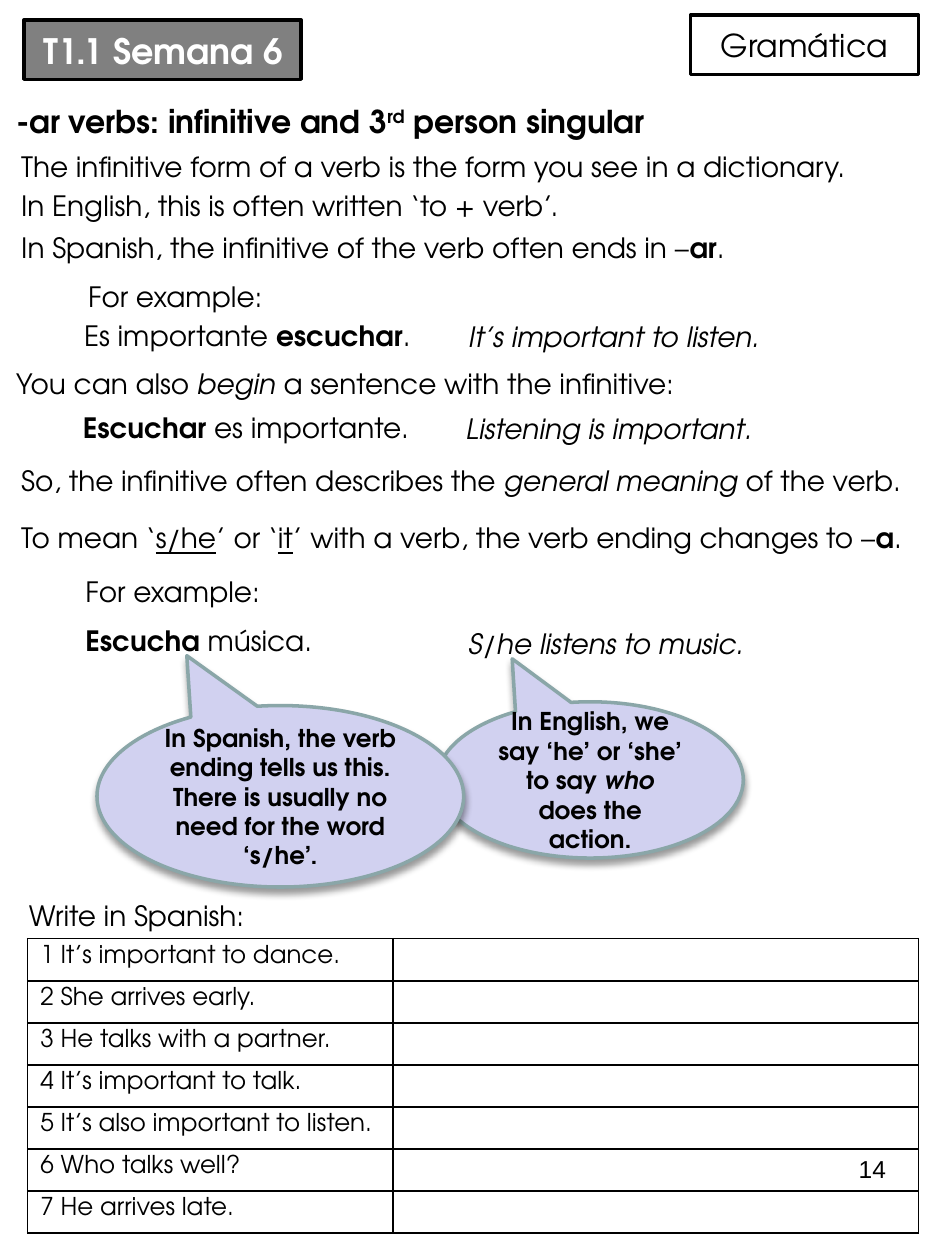
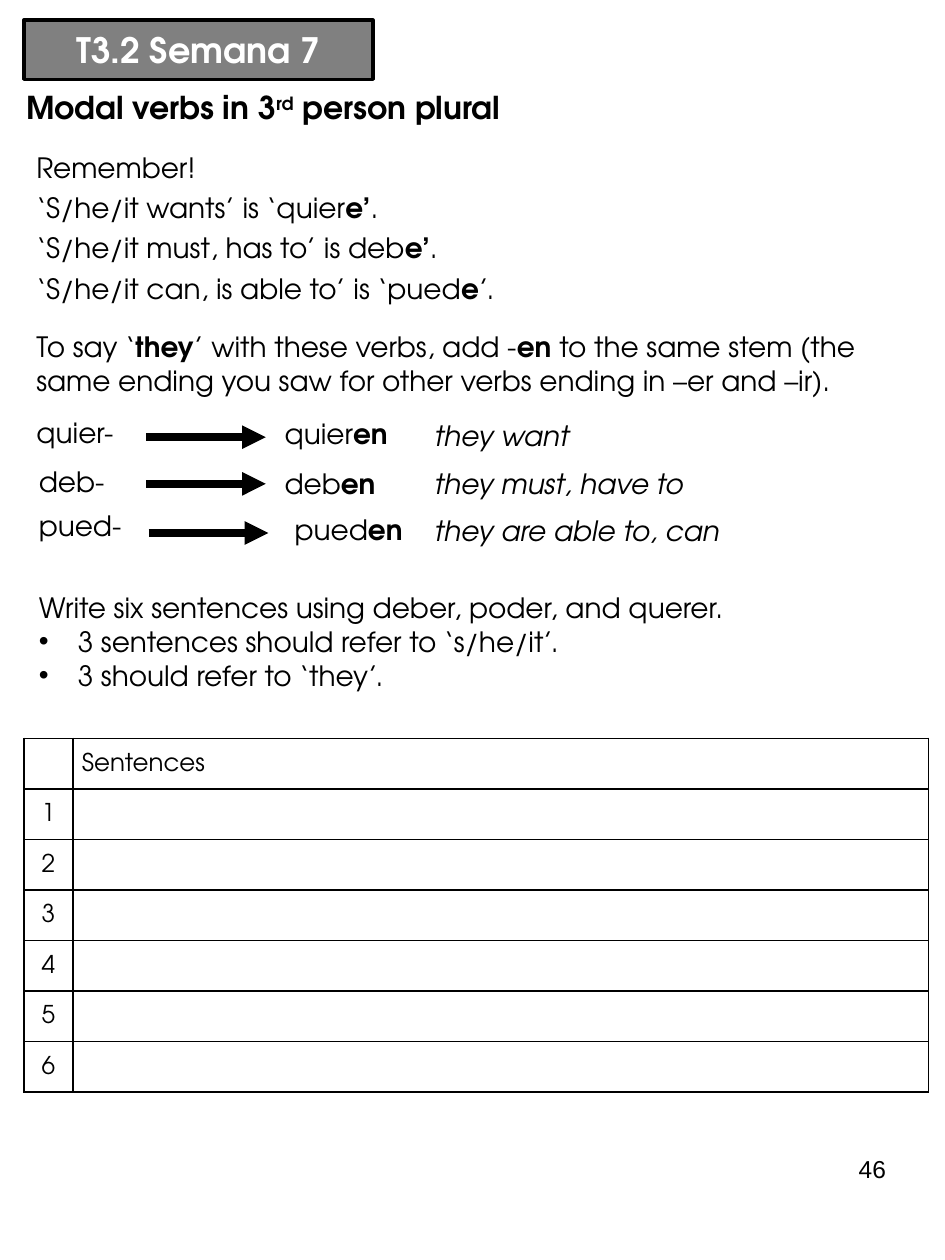
from lxml import etree
from pptx import Presentation
from pptx.dml.color import RGBColor
from pptx.enum.shapes import MSO_CONNECTOR, MSO_SHAPE
from pptx.enum.text import MSO_ANCHOR, MSO_AUTO_SIZE, PP_ALIGN
from pptx.oxml.ns import qn
from pptx.util import Pt

PX = 9144  # 100 px to the inch
FONT, PLAIN = "TeX Gyre Adventor", "Arial"
BLACK = RGBColor(0x00, 0x00, 0x00)
WHITE = RGBColor(0xFF, 0xFF, 0xFF)
GREY = RGBColor(0x80, 0x80, 0x80)
LILAC = RGBColor(0xD1, 0xD1, 0xF0)
TEAL = RGBColor(0x8A, 0xA6, 0xA8)
LEFT, CENTER, RIGHT = PP_ALIGN.LEFT, PP_ALIGN.CENTER, PP_ALIGN.RIGHT
MIDDLE = MSO_ANCHOR.MIDDLE
RECT, BUBBLE = MSO_SHAPE.RECTANGLE, MSO_SHAPE.OVAL_CALLOUT
GROW, FIXED = MSO_AUTO_SIZE.SHAPE_TO_FIT_TEXT, MSO_AUTO_SIZE.NONE
STRAIGHT = MSO_CONNECTOR.STRAIGHT
TITLE_ONLY = 5


def px(*sizes):
    return [round(size * PX) for size in sizes]


def node(parent, tag, **attrs):
    child = etree.SubElement(parent, qn(tag))
    for key, value in attrs.items():
        child.set(key, str(value))
    return child


def write(para, runs, size=16, color=BLACK, bold=None, italic=None,
          align=LEFT, font=FONT):
    """Fill a paragraph; a run is a string or a (string, style letters) pair.

    Styles are b (bold), i (italic), u (underline) and s (superscript).
    """
    para.alignment = align
    base = para.font
    base.name, base.size, base.bold, base.italic = font, Pt(size), bold, italic
    base.color.rgb = color
    for item in [runs] if isinstance(runs, str) else runs:
        words, style = (item, "") if isinstance(item, str) else item
        run = para.add_run()
        run.text = words
        if "b" in style:
            run.font.bold = True
        if "i" in style:
            run.font.italic = True
        if "u" in style:
            run.font.underline = True
        if "s" in style:
            run._r.get_or_add_rPr().set("baseline", "30000")


def text(slide, x, y, w, h, *paras, wrap=True, grow=True, space=None, **style):
    """Add a text box with one paragraph for each item of paras."""
    frame = slide.shapes.add_textbox(*px(x, y, w, h)).text_frame
    frame.word_wrap = wrap
    frame.auto_size = GROW if grow else FIXED
    for i, runs in enumerate(paras):
        para = frame.add_paragraph() if i else frame.paragraphs[0]
        write(para, runs, **style)
        if space:
            para.line_spacing = space
    return frame


def shape(slide, kind, x, y, w, h, fill, line=BLACK):
    item = slide.shapes.add_shape(kind, *px(x, y, w, h))
    item.shadow.inherit = False
    item.fill.solid()
    item.fill.fore_color.rgb = fill
    item.line.color.rgb = line
    item.line.width = Pt(2)
    item.text_frame.vertical_anchor = MIDDLE
    return item


def bubble(slide, x, y, w, h, runs):
    item = shape(slide, BUBBLE, x, y, w, h, LILAC, TEAL)
    item.adjustments[0] = -0.255
    item.adjustments[1] = -0.775
    item.text_frame.word_wrap = True
    write(item.text_frame.paragraphs[0], runs, 14, bold=True, align=CENTER)
    effects = item._element.spPr.find(qn("a:effectLst"))
    shade = node(effects, "a:outerShdw", blurRad=Pt(4), dist=Pt(3),
                 dir=5400000, rotWithShape=0)
    node(node(shade, "a:srgbClr", val=BLACK), "a:alpha", val=40000)


def arrow(slide, x, y, w):
    line = slide.shapes.add_connector(STRAIGHT, *px(x, y, x + w, y))
    line.line.color.rgb = BLACK
    line.line.width = Pt(4.5)
    node(line.line._get_or_add_ln(), "a:tailEnd", type="triangle")
    node(line._element.spPr, "a:effectLst")


def bullet(para):
    props = para._p.get_or_add_pPr()
    indent = px(31)[0]
    props.set("marL", str(indent))
    props.set("indent", str(-indent))
    mark = etree.Element(qn("a:buChar"), char="•")
    face = etree.Element(qn("a:buFont"), typeface=PLAIN)
    props.insert_element_before(face, "a:defRPr")
    props.insert_element_before(mark, "a:defRPr")


def border(cell):
    props = cell._tc.get_or_add_tcPr()
    for side in ("a:lnL", "a:lnR", "a:lnT", "a:lnB"):
        line = node(props, side, w=Pt(1))
        node(node(line, "a:solidFill"), "a:srgbClr", val=BLACK)
    cell.fill.background()


def grid(slide, x, y, cols, high, rows):
    """Add a ruled table and return it; rows hold the cell texts."""
    table = slide.shapes.add_table(
        len(rows), len(cols), *px(x, y, sum(cols), high * len(rows))).table
    table.first_row = table.horz_banding = False
    for col, wide in zip(table.columns, cols):
        col.width = px(wide)[0]
    for row, words in zip(table.rows, rows):
        row.height = px(high)[0]
        for cell, word in zip(row.cells, words):
            border(cell)
            write(cell.text_frame.paragraphs[0], word or [], 14)
            if not word:
                cell.margin_top = cell.margin_bottom = 0
    return table


def page(deck, title, wide, box, heading, spot, number):
    """Start a slide with its title band, heading and page number."""
    slide = deck.slides.add_slide(deck.slide_layouts[TITLE_ONLY])
    shape(slide, RECT, 19, 16, wide, 47, GREY)
    head = slide.shapes.title
    slide.shapes._spTree.append(head._element)  # in front of the band
    head.left, head.top, head.width, head.height = px(*box)
    frame = head.text_frame
    frame.auto_size, frame.vertical_anchor = FIXED, MIDDLE
    write(frame.paragraphs[0], title, 20, WHITE, bold=True, align=CENTER)
    text(slide, *spot, 40, heading, wrap=False, size=18, bold=True)

    def finish():
        text(slide, 538, 911, 175, 69, number, grow=False, size=14,
             align=RIGHT, font=PLAIN)
    return slide, finish


def singular(deck):
    slide, finish = page(
        deck, "T1.1 Semana 6", 220, (21, 20, 218, 40),
        ["-ar verbs: infinitive and 3", ("rd", "s"), " person singular"],
        (3, 76, 527), "14")
    lines = [
        (7, 114, 1265,
         "The infinitive form of a verb is the form you see in a dictionary."),
        (7, 145, 730, "In English, this is often written ‘to + verb’."),
        (7, 178, 1009, ["In Spanish, the infinitive of the verb often ends in –",
                        ("ar", "b"), "."]),
        (60, 217, 375, "For example:"),
        (57, 248, 547, ["Es importante ", ("escuchar", "b"), "."]),
        (3, 286, 1138, ["You can also ", ("begin", "i"),
                        " a sentence with the infinitive:"]),
        (56, 321, 587, [("Escuchar", "b"), " es importante."]),
        (7, 363, 1265, ["So, the infinitive often describes the ",
                        ("general meaning ", "i"), "of the verb."]),
        (7, 408, 722, ["To mean ‘", ("s/he", "u"), "’ or ‘", ("it", "u"),
                       "’ with a verb, the verb ending changes to –",
                       ("a", "b"), "."]),
        (58, 451, 816, "For example:"),
        (58, 490, 447, [("Escucha", "b"), " música."]),
        (13, 708, 701, "Write in Spanish:"),
    ]
    for x, y, w, runs in lines:
        text(slide, x, y, w, 37, runs)
    for x, y, words in [(362, 249, "It’s important to listen."),
                        (360, 322, "Listening is important."),
                        (362, 492, "S/he listens to music.")]:
        text(slide, x, y, 470, 37, words, italic=True)

    bubble(slide, 347, 557, 243, 124,
           ["In English, we say ‘he’ or ‘she’ to say ", ("who", "i"),
            " does the action."])
    bubble(slide, 77, 560, 291, 144,
           "In Spanish, the verb ending tells us this. There is usually "
           "no need for the word ‘s/he’.")

    tasks = ["It’s important to dance.", "She arrives early.",
             "He talks with a partner.", "It’s important to talk.",
             "It’s also important to listen.", "Who talks well?",
             "He arrives late."]
    grid(slide, 22, 745, [290, 417], 33.3,
         [(f"{i} {task}", "") for i, task in enumerate(tasks, 1)])
    finish()
    topic = shape(slide, RECT, 548, 12, 181, 47, WHITE)
    write(topic.text_frame.paragraphs[0], "Gramática", 18, align=CENTER)


def plural(deck):
    slide, finish = page(
        deck, "T3.2 Semana 7", 277, (19, 16, 277, 47),
        ["Modal verbs in 3", ("rd", "s"), " person plural"],
        (11, 65, 403), "46")
    text(slide, 19, 109, 757, 136,
         "Remember!",
         ["‘S/he/it wants’ is ‘quier", ("e’", "b"), "."],
         ["‘S/he/it must, has to’ is deb", ("e’", "b"), "."],
         ["‘S/he/it can, is able to’ is ‘pued", ("e", "b"), "’."],
         space=1.2)
    text(slide, 19, 257, 716, 64,
         ["To say ‘", ("they", "b"), "’ with these verbs, add -", ("en ", "b"),
          "to the same stem (the same ending you saw for other verbs "
          "ending in –er and –ir)."])

    # stem, its place, arrow start, place of the plural, meaning and its top
    verbs = [("quier", 19, 325, 116, 347, 216, 326, "they want", 327),
             ("deb", 21, 364, 116, 384, 216, 365, "they must, have to", 365),
             ("pued", 21, 399, 118, 423, 224, 402, "they are able to, can", 403)]
    for stem, x, y, tip, mid, left, top, sense, high in verbs:
        text(slide, x, y, 97, 37, stem + "-")
        arrow(slide, tip, mid, 95)
        text(slide, left, top, 121, 37, [stem, ("en", "b")])
        text(slide, 335, high, 297, 37, sense, italic=True)

    task = text(slide, 21, 464, 716, 91,
                "Write six sentences using deber, poder, and querer.",
                "3 sentences should refer to ‘s/he/it’.",
                "3 should refer to ‘they’.")
    for para in task.paragraphs[1:]:
        bullet(para)

    rows = [("", "Sentences")] + [(str(i), "") for i in range(1, 7)]
    table = grid(slide, 19, 586, [39, 679], 40.1, rows)
    for cell in table.iter_cells():
        cell.vertical_anchor = MIDDLE
        cell.margin_left = cell.margin_right = px(7)[0]
        cell.margin_top = cell.margin_bottom = 0
        cell.text_frame.paragraphs[0].line_spacing = 1.07
    for row in table.rows:
        row.cells[0].text_frame.paragraphs[0].alignment = CENTER
    finish()


def main():
    deck = Presentation()
    deck.slide_width, deck.slide_height = px(750, 1000)
    singular(deck)
    plural(deck)
    deck.save("out.pptx")


if __name__ == "__main__":
    main()
